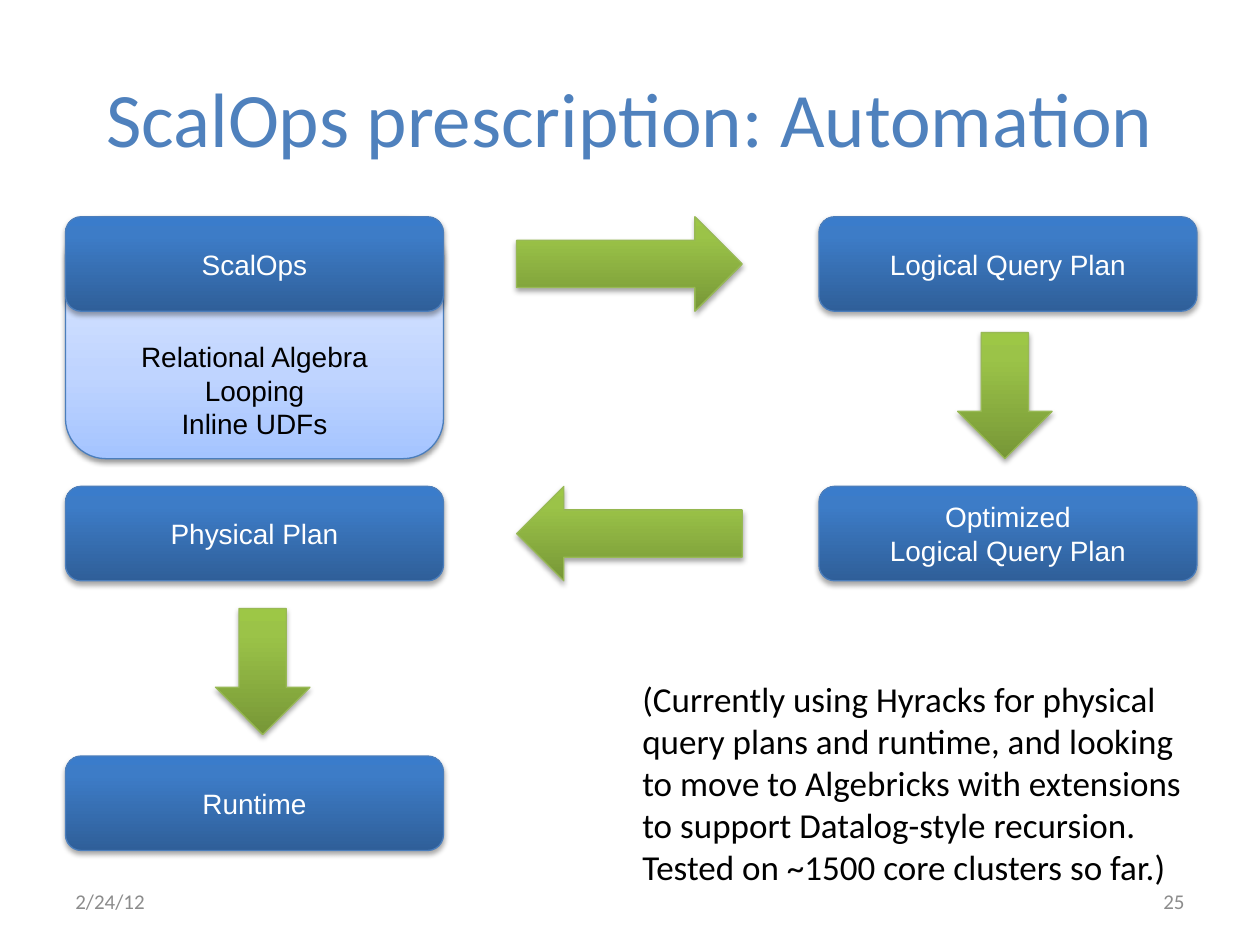
import pptx
import pptx.util
import pptx.dml.color
import pptx.enum.shapes
import pptx.enum.text
import pptx.oxml
import pptx.oxml.ns

Shape = pptx.enum.shapes.MSO_SHAPE
Align = pptx.enum.text.PP_ALIGN
Anchor = pptx.enum.text.MSO_ANCHOR

TITLE = "ScalOps prescription: Automation"
NOTE = ("(Currently using Hyracks for physical query plans and runtime, and looking "
        "to move to Algebricks with extensions to support Datalog-style recursion. "
        "Tested on ~1500 core clusters so far.)")
LANGUAGE_FEATURES = ["Relational Algebra", "Looping", "Inline UDFs"]

# Steps: column, row, lines
STEPS = [
    (1, 0, ["Logical Query Plan"]),
    (1, 1, ["Optimized", "Logical Query Plan"]),
    (0, 0, ["ScalOps"]),
    (0, 1, ["Physical Plan"]),
    (0, 2, ["Runtime"]),
]
COLUMNS = [0.52, 6.5]
TOP, ROW_PITCH = 1.72, 2.14
STEP_WIDTH, STEP_HEIGHT = 3, 0.75
ROWS = [TOP + ROW_PITCH * row for row in range(3)]

ACROSS, DOWN = (1.79, STEP_HEIGHT), (STEP_HEIGHT, 1)
ARROWS = [
    (Shape.RIGHT_ARROW, (4.1, ROWS[0], *ACROSS)),
    (Shape.LEFT_ARROW, (4.1, ROWS[1], *ACROSS)),
    (Shape.DOWN_ARROW, (7.6, 2.64, *DOWN)),
    (Shape.DOWN_ARROW, (1.71, 4.83, *DOWN)),
]

# Gradient stops run from the bottom edge to the top
PANEL = {"stops": [(0, "A4C4FF"), (35, "BFD4FF"), (100, "E6EEFF")],
         "line": "4B7EBC", "shadow": (38, 1.6)}
STEP = {"stops": [(0, "2F5F99"), (80, "3D7CC7"), (100, "3A7CCB")],
        "line": "4B7EBC", "shadow": (35, 1.8)}
ARROW = {"stops": [(0, "779737"), (80, "9BC348"), (100, "9DC746")],
         "line": "98B955", "shadow": (35, 1.8)}


def color(value):
    return pptx.dml.color.RGBColor.from_string(value)


def inches(lengths):
    return [pptx.util.Inches(length) for length in lengths]


def write(box, lines, size, font, hue, align=Align.LEFT, anchor=Anchor.TOP):
    frame = box.text_frame
    frame.word_wrap = True
    frame.vertical_anchor = anchor
    for index, line in enumerate(lines):
        para = frame.paragraphs[0] if index == 0 else frame.add_paragraph()
        para.alignment = align
        span = para.add_run()
        span.text = line
        for name, value in {"size": pptx.util.Pt(size), "name": font}.items():
            setattr(span.font, name, value)
        span.font.color.rgb = color(hue)


def add_text(page, place, *text, **layout):
    write(page.shapes.add_textbox(*inches(place)), *text, **layout)


def add_glossy(page, kind, place, style):
    """Add a shape with a vertical gradient, a thin line and a soft shadow below."""
    shape = page.shapes.add_shape(kind, *inches(place))
    namespace = pptx.oxml.ns.nsdecls("a")
    stops = "".join(f'<a:gs pos="{share * 1000}"><a:srgbClr val="{hue}"/></a:gs>'
                    for share, hue in style["stops"])
    shape.fill.background()
    fill = shape._element.spPr.find(pptx.oxml.ns.qn("a:noFill"))
    fill.getparent().replace(fill, pptx.oxml.parse_xml(
        f'<a:gradFill {namespace} rotWithShape="1"><a:gsLst>{stops}</a:gsLst>'
        '<a:lin ang="16200000" scaled="0"/></a:gradFill>'))
    shape.line.color.rgb = color(style["line"])
    shape.line.width = pptx.util.Pt(0.75)
    shape.shadow.inherit = False
    opacity, distance = style["shadow"]
    effects = shape._element.spPr.find(pptx.oxml.ns.qn("a:effectLst"))
    effects.append(pptx.oxml.parse_xml(
        f'<a:outerShdw {namespace} blurRad="{pptx.util.Pt(3.1)}" '
        f'dist="{pptx.util.Pt(distance)}" dir="5400000" rotWithShape="0">'
        f'<a:srgbClr val="000000"><a:alpha val="{opacity * 1000}"/></a:srgbClr>'
        '</a:outerShdw>'))
    return shape


def main():
    deck = pptx.Presentation()
    deck.slide_width, deck.slide_height = inches((10, 7.5))
    page = deck.slides.add_slide(deck.slide_layouts[5])

    title = page.shapes.title
    title.left, title.top, title.width, title.height = inches((0.5, 0.3, 9, 1.25))
    write(title, [TITLE], 44, "Calibri", "4F81BD", Align.CENTER, Anchor.MIDDLE)

    panel = add_glossy(page, Shape.ROUNDED_RECTANGLE,
                       (COLUMNS[0], TOP, STEP_WIDTH, 1.92), PANEL)
    write(panel, LANGUAGE_FEATURES, 16, "Arial", "000000", Align.CENTER, Anchor.BOTTOM)

    for column, row, lines in STEPS:
        place = (COLUMNS[column], ROWS[row], STEP_WIDTH, STEP_HEIGHT)
        step = add_glossy(page, Shape.ROUNDED_RECTANGLE, place, STEP)
        write(step, lines, 16, "Arial", "FFFFFF", Align.CENTER, Anchor.MIDDLE)
    for kind, place in ARROWS:
        add_glossy(page, kind, place, ARROW)

    add_text(page, (5, 5.33, 4.67, 1.78), [NOTE], 20, "Calibri", "000000")
    for left, text, align in [(0.5, "2/24/12", Align.LEFT), (7.17, "25", Align.RIGHT)]:
        add_text(page, (left, 6.95, 2.33, 0.4), [text], 12, "Calibri", "8C8C8C",
                 align=align, anchor=Anchor.MIDDLE)

    deck.save("out.pptx")


if __name__ == "__main__":
    main()
